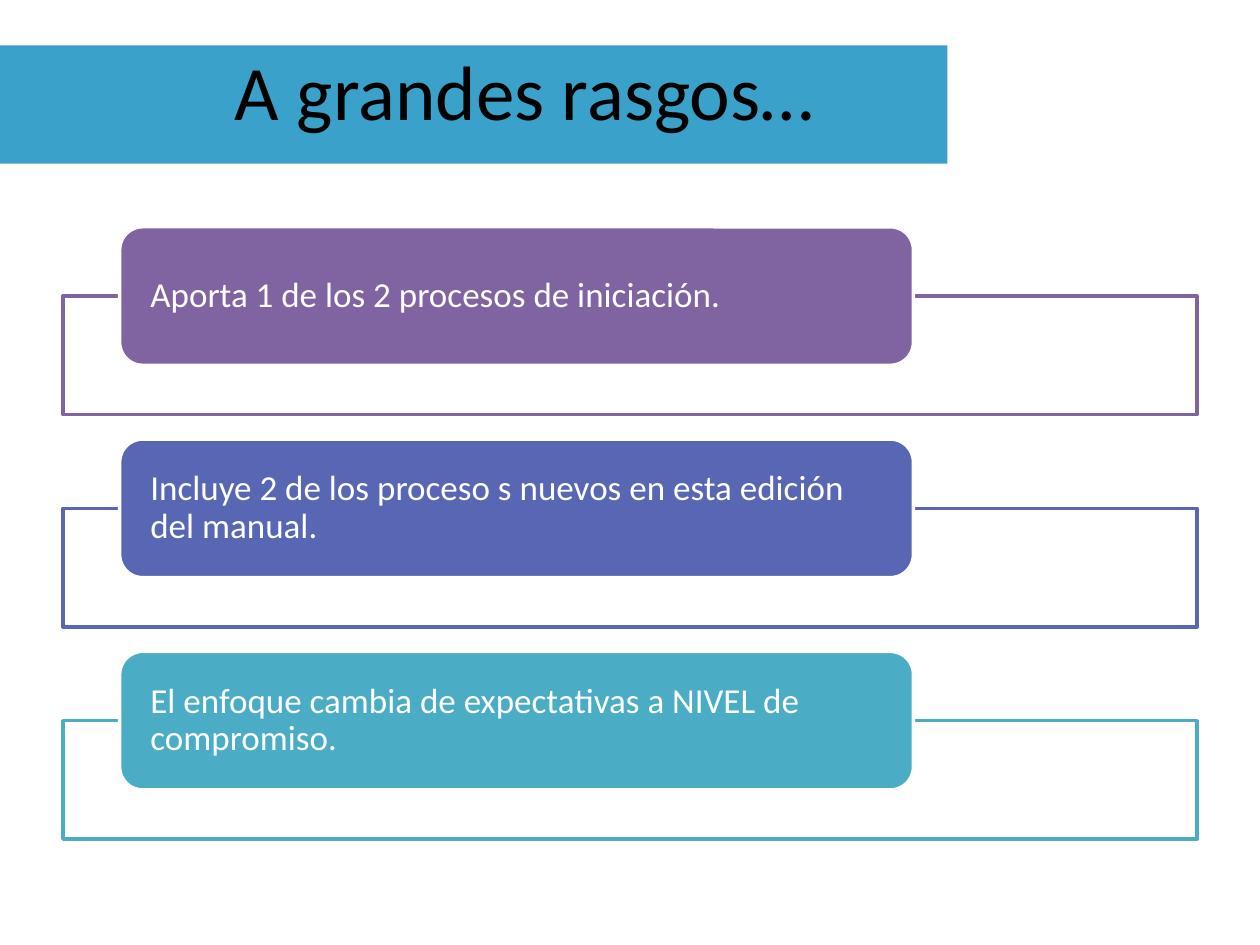
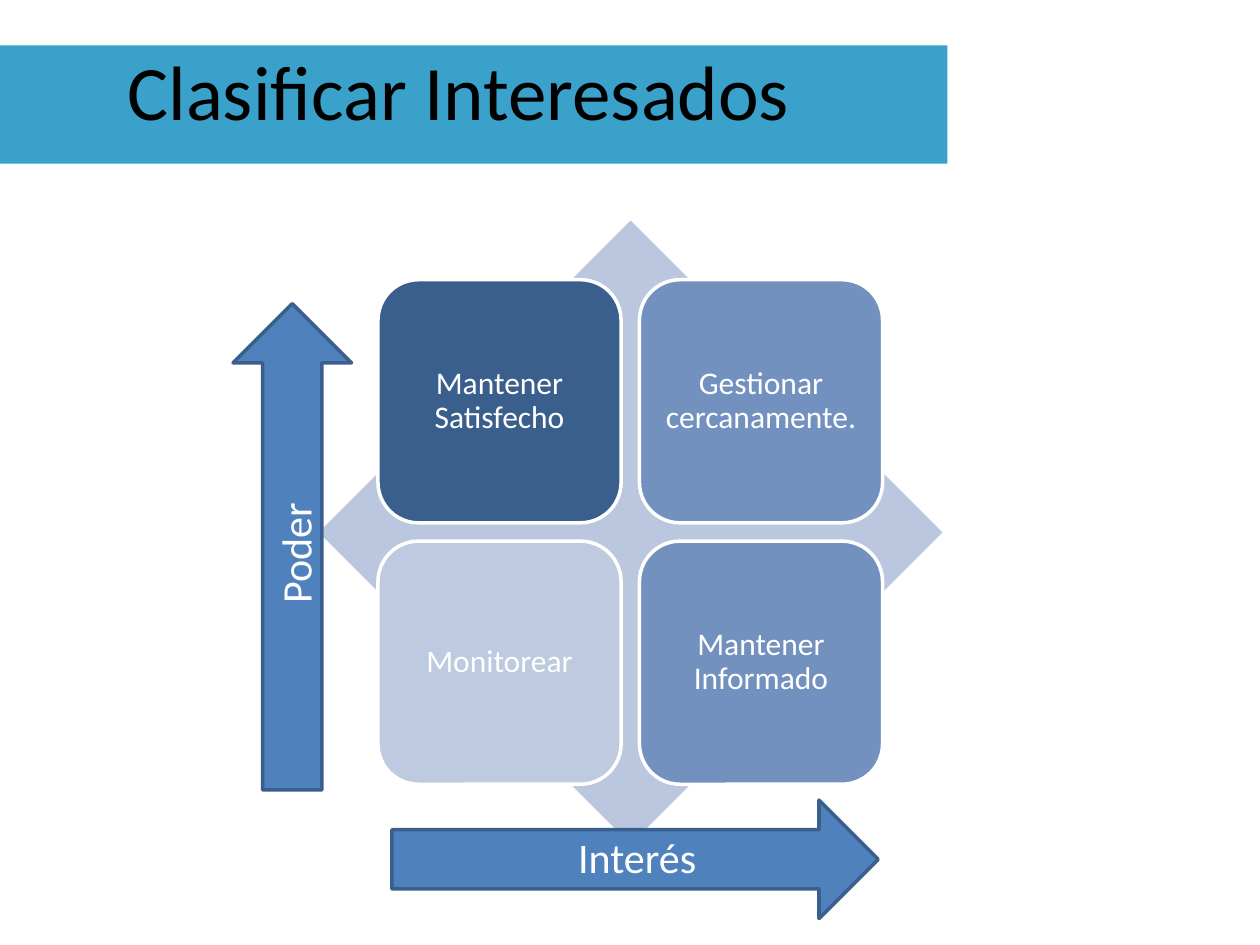
from pptx import Presentation
from pptx.dml.color import RGBColor
from pptx.enum.shapes import MSO_SHAPE
from pptx.enum.text import MSO_ANCHOR, PP_ALIGN
from pptx.util import Inches, Pt

RECT = MSO_SHAPE.RECTANGLE
ROUNDED = MSO_SHAPE.ROUNDED_RECTANGLE
DIAMOND = MSO_SHAPE.DIAMOND
UP_ARROW = MSO_SHAPE.UP_ARROW
TOP, MIDDLE = MSO_ANCHOR.TOP, MSO_ANCHOR.MIDDLE
LEFT, CENTER = PP_ALIGN.LEFT, PP_ALIGN.CENTER

WIDTH, HEIGHT = Inches(10), Inches(7.5)
COL, ROW = WIDTH / 100, HEIGHT / 75
FONT = "Calibri"
WHITE, BLACK = "FFFFFF", "000000"
BAND, NAVY, BLUE, MIST = "3AA1CA", "3A5F8C", "4F81BD", "BBC7DE"

POINTS = [
    ("Aporta 1 de los 2 procesos de iniciación.", "8064A2"),
    ("Incluye 2 de los proceso s nuevos en esta edición del manual.", "5767B4"),
    ("El enfoque cambia de expectativas a NIVEL de compromiso.", "4BACC6"),
]
QUADRANTS = [
    ("Mantener Satisfecho", NAVY),
    ("Gestionar cercanamente.", "7391BF"),
    ("Monitorear", "BECADF"),
    ("Mantener Informado", "7391BF"),
]


def rgb(value):
    return RGBColor.from_string(value)


def place(col, row, cols, rows):
    return round(col * COL), round(row * ROW), round(cols * COL), round(rows * ROW)


def add_box(s, kind, area, fill, line=None, rotation=0):
    sp = s.shapes.add_shape(kind, *place(*area))
    sp.shadow.inherit = False
    sp.rotation = rotation
    sp.fill.solid()
    sp.fill.fore_color.rgb = rgb(fill)
    if line:
        sp.line.color.rgb = rgb(line)
        sp.line.width = Pt(2)
    else:
        sp.line.fill.background()
    return sp


def write(sp, text, size, color=WHITE, align=LEFT, anchor=MIDDLE, spacing=1.0):
    tf = sp.text_frame
    tf.word_wrap = True
    tf.vertical_anchor = anchor
    p = tf.paragraphs[0]
    p.alignment = align
    p.line_spacing = spacing
    r = p.add_run()
    r.text = text
    r.font.name = FONT
    r.font.size = Pt(size)
    r.font.color.rgb = rgb(color)


def set_insets(sp, cols, rows):
    tf = sp.text_frame
    tf.margin_left = tf.margin_right = round(cols * COL)
    tf.margin_top = tf.margin_bottom = round(rows * ROW)


def add_label(s, text, area, size, rotation=0, **style):
    sp = s.shapes.add_textbox(*place(*area))
    sp.rotation = rotation
    write(sp, text, size, anchor=TOP, **style)


def add_titled_slide(prs, title, col, cols):
    s = prs.slides.add_slide(prs.slide_layouts[6])
    add_box(s, RECT, (0, 3.6, 75.2, 9.4), BAND)
    add_label(s, title, (col, 3, cols, 12.5), 44, color=BLACK, align=CENTER)
    return s


def add_card(s, area, text, fill, size, inset, align=LEFT):
    sp = add_box(s, ROUNDED, area, fill, WHITE)
    set_insets(sp, inset, 0)
    write(sp, text, size, align=align, spacing=0.9)


def add_points(s, top=18, pitch=16.85, height=11):
    for i, (text, color) in enumerate(POINTS):
        row = top + i * pitch
        add_box(s, RECT, (5, row + height / 2, 90, 9.4), WHITE, color)
        add_card(s, (9.5, row, 63, height), text, color, 20, 1.9)


def add_matrix(s, left=30, top=22.2, side=19.3, pitch=20.75):
    add_box(s, DIAMOND, (25.3, 17.5, 49.5, 49.5), MIST)
    for i, (text, color) in enumerate(QUADRANTS):
        row, col = divmod(i, 2)
        area = (left + col * pitch, top + row * pitch, side, side)
        add_card(s, area, text, color, 18, 0, CENTER)


def add_axis(s, text, arrow, label, arrow_turn=0, label_turn=0):
    add_box(s, UP_ARROW, (*arrow, 9.4, 38.6), BLUE, NAVY, arrow_turn)
    add_label(s, text, (*label, 24, 5), 24, label_turn)


def main():
    prs = Presentation()
    prs.slide_width, prs.slide_height = WIDTH, HEIGHT

    add_points(add_titled_slide(prs, "A grandes rasgos…", 5, 73.3))

    s = add_titled_slide(prs, "Clasificar Interesados", 0, 72.8)
    add_matrix(s)
    add_axis(s, "Poder", (18.5, 24.1), (11.4, 34.4), label_turn=270)
    add_axis(s, "Interés", (45.7, 48.9), (44.9, 65.5), arrow_turn=90)

    prs.save("out.pptx")


if __name__ == "__main__":
    main()
